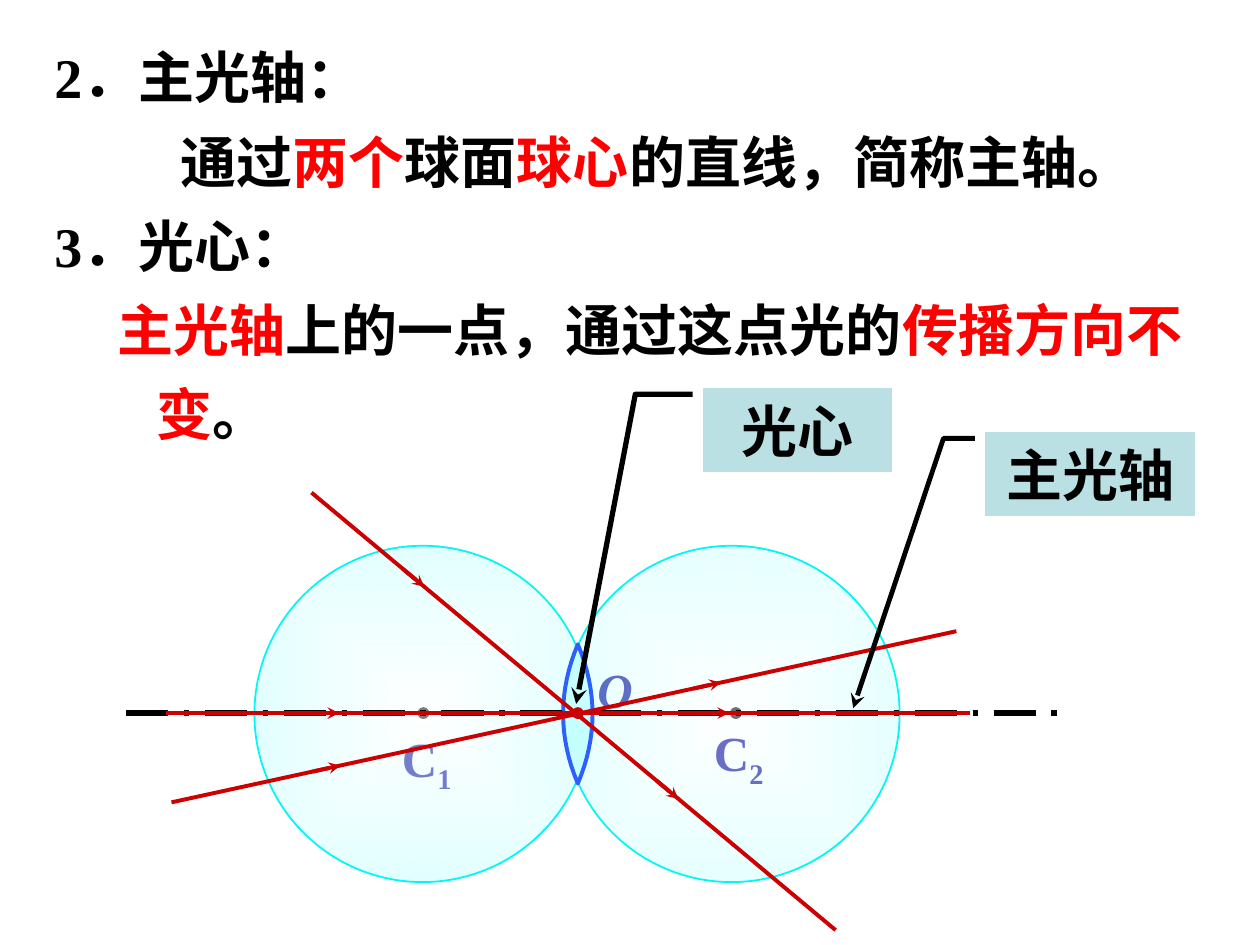
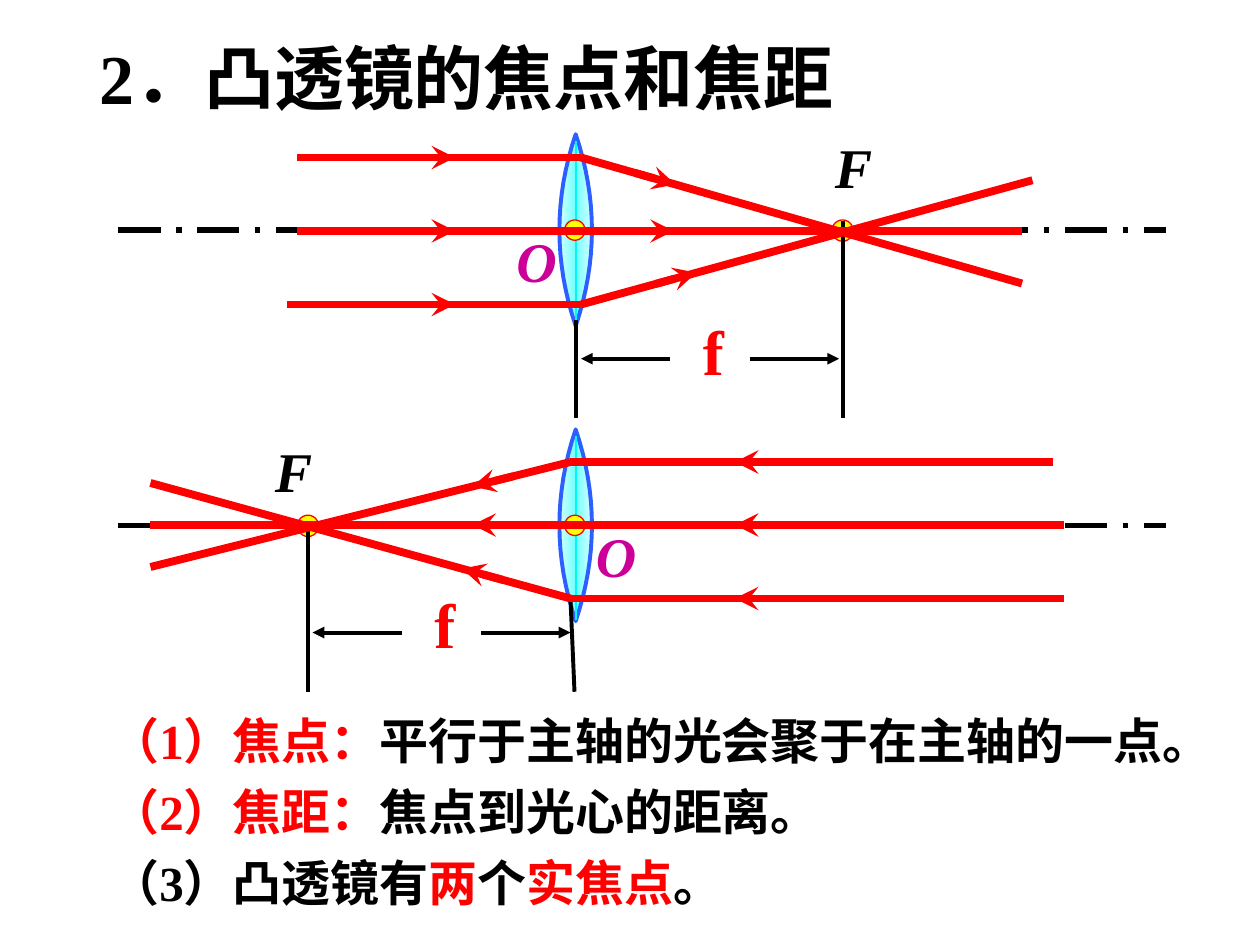
from math import hypot

from lxml.etree import SubElement
from pptx import Presentation
from pptx.dml.color import RGBColor
from pptx.enum.dml import MSO_LINE
from pptx.enum.shapes import MSO_CONNECTOR, MSO_SHAPE
from pptx.enum.text import MSO_ANCHOR, PP_ALIGN
from pptx.oxml import parse_xml
from pptx.oxml.ns import nsdecls, qn
from pptx.util import Pt

FONT = "Times New Roman"
BLACK = RGBColor(0x00, 0x00, 0x00)
RED = RGBColor(0xFF, 0x00, 0x00)
DARK_RED = RGBColor(0xCC, 0x00, 0x00)
NAVY = RGBColor(0x00, 0x00, 0x99)
MAGENTA = RGBColor(0xCC, 0x00, 0x99)
YELLOW = RGBColor(0xFF, 0xFF, 0x00)
LENS_EDGE = RGBColor(0x2D, 0x5F, 0xFF)
LENS_FILL = RGBColor(0xC5, 0xFF, 0xFF)
CYAN = RGBColor(0x00, 0xF8, 0xF2)
CALLOUT_FILL = RGBColor(0xBB, 0xE0, 0xE3)

# Slide 1 content: paragraphs are (left margin, first-line indent, runs)
AXIS_TITLE = "2．主光轴："
AXIS_BODY = [
    (90, -18, [("通过", BLACK), ("两个", RED), ("球面", BLACK), ("球心", RED),
               ("的直线，简称主轴。", BLACK)]),
    (27, -27, [("3．光心：", BLACK)]),
    (58.5, -22.5, [("主光轴", RED), ("上的一点，通过这点光的", BLACK),
                   ("传播方向不变", RED), ("。", BLACK)]),
]
SPHERES = [  # sphere centre x, alpha, dot x, label box, index
    (241.5, 49, 242, (229.7, 416, 48, 34), "1"),
    (418, 43, 420.5, (408, 413, 48, 34), "2"),
]
SPHERE_RADIUS = 96.1
AXIS_Y = 407.5
CENTRE_X = 330.2
CENTRE_RAYS = [
    ((178, 281.5), (477.5, 531.5)),
    ((98, 458.5), (546.5, 360.7)),
    ((95, AXIS_Y), (554.4, AXIS_Y)),
]
ARROW_TIPS = (0.215, 0.7)  # shares of each ray
CALLOUTS = [
    ("主光轴", (563, 247, 120, 48), 2.75, (0.073, -0.05, 0.073, -0.199, 3.286, -0.629)),
    ("光心", (401.8, 221.8, 108, 48), 3, (0.073, -0.056, 0.073, -0.359, 3.76, -0.672)),
]

# Slide 2 content
FOCUS_TITLE = "2．凸透镜的焦点和焦距"
FOCUS_BODY = [
    (27, -27, [("（1）焦点：", RED), ("平行于主轴的光会聚于在主轴的一点。", BLACK)]),
    (27, -27, [("（2）焦距：", RED), ("焦点到光心的距离。", BLACK)]),
    (27, -27, [("（3）凸透镜有", BLACK), ("两", RED), ("个", BLACK),
               ("实焦点", RED), ("。", BLACK)]),
]
LENS_X = 329
FOCUS_DIAGRAMS = [
    dict(
        axis_y=131.5, focus_x=481.5,
        o_label=(288, 126), f_label=(470, 72), length_label=(394.6, 175),
        guides=[((LENS_X, 183), (LENS_X, 239)), ((481.5, 126), (481.5, 239))],
        length_y=205, length_arrows=[(428.4, 479.5), (383, 332)],
        rays=[  # start, end, x of arrow tips
            ((332, 174), (590, 103), [398]),
            ((164, 174), (332, 174), [260]),
            ((170, 132), (584, 132), [260, 385]),
            ((170, 90), (332, 90), [260]),
            ((332, 90), (584, 162), [386]),
        ],
    ),
    dict(
        axis_y=300.2, focus_x=176,
        o_label=(333.4, 294.5), f_label=(150, 246), length_label=(241.2, 331.2),
        guides=[((176, 300), (176, 395.3)), ((326, 342), (328.3, 395.3))],
        length_y=361.5, length_arrows=[(275, 326), (229.7, 178.6)],
        rays=[
            ((608, 342), (326, 342), [420]),
            ((326, 342), (86, 276), [264]),
            ((608, 300), (86, 300), [420, 270]),
            ((602, 264), (326, 264), [420]),
            ((326, 264), (86, 324), [270]),
        ],
    ),
]


def box(*lengths):
    return [Pt(length) for length in lengths]


def add_run(paragraph, text, size, color, italic=False):
    run = paragraph.add_run()
    run.text = text
    run.font.name, run.font.size = FONT, Pt(size)
    run.font.bold, run.font.italic = True, italic
    run.font.color.rgb = color
    return run


def add_text(slide, place, paragraphs, size, spacing=1.0, italic=False,
             inset=True, anchor=MSO_ANCHOR.TOP):
    frame = slide.shapes.add_textbox(*box(*place)).text_frame
    frame.word_wrap = True
    frame.vertical_anchor = anchor
    if not inset:
        frame.margin_left = frame.margin_right = 0
        frame.margin_top = frame.margin_bottom = 0
    for number, (margin, indent, runs) in enumerate(paragraphs):
        paragraph = frame.add_paragraph() if number else frame.paragraphs[0]
        paragraph.line_spacing = spacing
        properties = paragraph._p.get_or_add_pPr()
        properties.set("marL", str(Pt(margin)))
        properties.set("indent", str(Pt(indent)))
        for text, color in runs:
            add_run(paragraph, text, size, color, italic)
    return frame


def add_title(slide, place, title, size):
    add_text(slide, place, [(0, 0, [(title, BLACK)])], size, anchor=MSO_ANCHOR.MIDDLE)


def add_label(slide, place, text, size, color, italic=False, inset=True):
    return add_text(slide, place, [(0, 0, [(text, color)])], size,
                    italic=italic, inset=inset)


def add_tip(line, kind):
    SubElement(line._get_or_add_ln(), qn("a:tailEnd"), type=kind)


def add_line(slide, start, end, color, width, tip=None, dash=None):
    connector = slide.shapes.add_connector(MSO_CONNECTOR.STRAIGHT, *box(*start, *end))
    connector.line.color.rgb = color
    connector.line.width = Pt(width)
    if dash:
        connector.line.dash_style = dash
    if tip:
        add_tip(connector.line, tip)
    SubElement(connector._element.spPr, qn("a:effectLst"))


def add_ray(slide, start, end, shares, color, width, arrow_length):
    """Draw a ray and put an arrowhead at each share of its length."""
    add_line(slide, start, end, color, width)
    dx, dy = end[0] - start[0], end[1] - start[1]
    back = arrow_length / hypot(dx, dy)
    for share in shares:
        tail, tip = [(start[0] + dx * at, start[1] + dy * at)
                     for at in (share - back, share)]
        add_line(slide, tail, tip, color, width, tip="stealth")


def style(shape, fill, edge, width):
    shape.shadow.inherit = False
    if fill is not None:
        shape.fill.solid()
        shape.fill.fore_color.rgb = fill
    shape.line.color.rgb = edge
    shape.line.width = Pt(width)


def add_gradient(shape, inner, outer, kind, alpha=100):
    shape.fill.background()
    stops = "".join(
        f'<a:gs pos="{position}"><a:srgbClr val="{color}">'
        f'<a:alpha val="{alpha * 1000}"/></a:srgbClr></a:gs>'
        for position, color in ((0, inner), (100000, outer)))
    gradient = parse_xml(
        f'<a:gradFill {nsdecls("a")} rotWithShape="1"><a:gsLst>{stops}</a:gsLst>'
        f'<a:path path="{kind}"><a:fillToRect l="50000" t="50000" r="50000" b="50000"/>'
        '</a:path></a:gradFill>')
    properties = shape._element.spPr
    properties.replace(properties.find(qn("a:noFill")), gradient)


def add_disc(slide, x, y, radius, fill, edge, width=0.75):
    disc = slide.shapes.add_shape(
        MSO_SHAPE.OVAL, *box(x - radius, y - radius, 2 * radius, 2 * radius))
    style(disc, fill, edge, width)
    return disc


def add_lens(slide, x, y, half_width, half_height, fill=None):
    heights = [step / 8 for step in range(-8, 9)]
    left = [(x - half_width * (1 - h * h), y + half_height * h) for h in heights]
    right = [(2 * x - px, py) for px, py in left[-2:0:-1]]
    outline = [box(*point) for point in left + right]
    builder = slide.shapes.build_freeform(*outline[0])
    builder.add_line_segments(outline[1:], close=True)
    lens = builder.convert_to_shape()
    style(lens, fill, LENS_EDGE, 2.25)
    return lens


def build_axis_slide(slide):
    # Sphere centres and their labels
    for _, _, dot_x, place, index in SPHERES:
        add_disc(slide, dot_x, AXIS_Y, 3, BLACK, BLACK)
        frame = add_label(slide, place, "C", 28, NAVY, inset=False)
        subscript = add_run(frame.paragraphs[0], index, 28, NAVY)
        subscript.font._element.set("baseline", "-25000")
    add_label(slide, (341.3, 376.6, 24, 34), "O", 28, NAVY, italic=True, inset=False)

    # Spheres and the lens where they overlap
    for x, alpha, *_ in SPHERES:
        sphere = add_disc(slide, x, 408, SPHERE_RADIUS, None, CYAN, 1)
        add_gradient(sphere, "FFFFFF", "C5FFFF", "shape", alpha)
    add_lens(slide, CENTRE_X, 408, 8.4, 39.8, LENS_FILL)

    # Axis and rays through the optical centre
    add_line(slide, (72, AXIS_Y), (607.7, AXIS_Y), BLACK, 3, dash=MSO_LINE.LONG_DASH_DOT)
    for start, end in CENTRE_RAYS:
        add_ray(slide, start, end, ARROW_TIPS, DARK_RED, 2.25, 16)
    add_disc(slide, CENTRE_X, AXIS_Y, 3, DARK_RED, DARK_RED)

    # Wording
    add_text(slide, (24, 60, 672, 162), AXIS_BODY, 32, 1.25)
    add_title(slide, (24, 12.2, 606, 62.6), AXIS_TITLE, 32)
    for text, place, width, bends in CALLOUTS:
        callout = slide.shapes.add_shape(MSO_SHAPE.LINE_CALLOUT_2_NO_BORDER, *box(*place))
        for number, bend in enumerate(bends):
            callout.adjustments[number] = bend
        style(callout, CALLOUT_FILL, BLACK, width)
        add_tip(callout.line, "stealth")
        paragraph = callout.text_frame.paragraphs[0]
        paragraph.alignment = PP_ALIGN.CENTER
        add_run(paragraph, text, 32, BLACK)


def add_focus_diagram(slide, axis_y, focus_x, o_label, f_label, length_label,
                      guides, length_y, length_arrows, rays):
    # Lens, axis and points
    lens = add_lens(slide, LENS_X, axis_y, 9.3, 54.8)
    add_gradient(lens, "71FFFF", "D5FFFF", "rect")
    add_line(slide, (LENS_X, axis_y - 51), (LENS_X, axis_y + 54), CYAN, 1)
    add_line(slide, (67.7, axis_y), (666, axis_y), BLACK, 3, dash=MSO_LINE.LONG_DASH_DOT)
    add_disc(slide, LENS_X - 0.5, axis_y, 5.8, YELLOW, RED)
    add_disc(slide, focus_x, axis_y + 0.3, 6.1, YELLOW, RED)
    add_label(slide, (*o_label, 62.6, 45), "O", 32, MAGENTA, italic=True)
    add_label(slide, (*f_label, 39.6, 45), "F", 32, BLACK, italic=True)

    # Focal length
    for start, end in guides:
        add_line(slide, start, end, BLACK, 2.25)
    for tail_x, tip_x in length_arrows:
        add_line(slide, (tail_x, length_y), (tip_x, length_y), BLACK, 2.25, tip="triangle")
    add_label(slide, (*length_label, 28, 51), "f", 36, RED)

    # Rays
    for start, end, tips in rays:
        shares = [(x - start[0]) / (end[0] - start[0]) for x in tips]
        add_ray(slide, start, end, shares, RED, 4.5, 24)


def build_focus_slide(slide):
    add_title(slide, (49.7, 16, 534, 56), FOCUS_TITLE, 40)
    add_text(slide, (56, 396, 646, 120), FOCUS_BODY, 28, 1.2)
    for diagram in FOCUS_DIAGRAMS:
        add_focus_diagram(slide, **diagram)


def main():
    deck = Presentation()
    deck.slide_width, deck.slide_height = Pt(720), Pt(540)
    for build in (build_axis_slide, build_focus_slide):
        build(deck.slides.add_slide(deck.slide_layouts[6]))
    deck.save("out.pptx")


if __name__ == "__main__":
    main()
